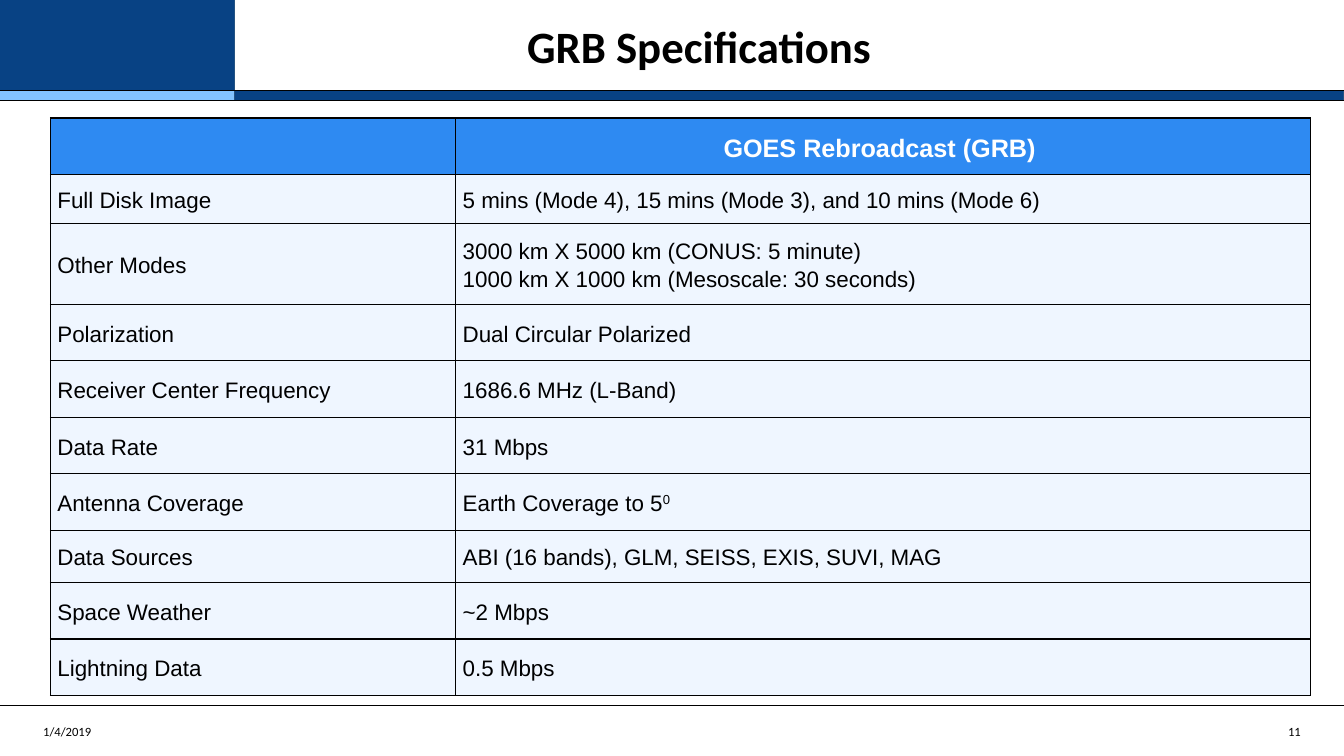
from lxml import etree
from pptx import Presentation
from pptx import util as u
from pptx.dml.color import RGBColor
from pptx.enum import shapes, text
from pptx.oxml.ns import qn

EMU_PER_PX = 9144  # 100 px to the inch
SLIDE_WIDTH, SLIDE_HEIGHT = 1333, 750
BAND_LEFT, BAND_TOP, BAND_BOTTOM, FOOTER_LINE = 233, 90, 100, 700

COLORS = {
    "navy": "084284",
    "sky": "82C3FF",
    "outline": "255382",
    "header": "2E8AF2",
    "body": "EFF6FF",
    "black": "000000",
    "white": "FFFFFF",
}

FORMATS = {
    "title": {"name": "Calibri", "size": u.Pt(32), "bold": True},
    "footer": {"name": "Calibri", "size": u.Pt(9), "bold": False},
    "header": {"name": "Arial", "size": u.Pt(18), "bold": True},
    "body": {"name": "Arial", "size": u.Pt(16), "bold": False},
}

COLUMN_WIDTHS = [402, 848]
# Row height, label, value lines; "^" starts a superscript
ROWS = [
    (56, "", ["GOES Rebroadcast (GRB) "]),
    (49, "Full Disk Image", ["5 mins (Mode 4), 15 mins (Mode 3), and 10 mins (Mode 6)"]),
    (80, "Other Modes", ["3000 km X 5000 km (CONUS: 5 minute)",
                         "1000 km X 1000 km (Mesoscale: 30 seconds)"]),
    (56, "Polarization", ["Dual Circular Polarized"]),
    (56, "Receiver Center Frequency", ["1686.6 MHz (L-Band)"]),
    (56, "Data Rate", ["31 Mbps"]),
    (56, "Antenna Coverage", ["Earth Coverage to 5^0"]),
    (52, "Data Sources", ["ABI (16 bands), GLM, SEISS, EXIS, SUVI, MAG"]),
    (56, "Space Weather", ["~2 Mbps"]),
    (56, "Lightning Data", ["0.5 Mbps"]),
]


def px(*lengths):
    return [u.Emu(length * EMU_PER_PX) for length in lengths]


def color(name):
    return RGBColor.from_string(COLORS[name])


def apply_format(font, format_name, color_name):
    for attribute, value in FORMATS[format_name].items():
        setattr(font, attribute, value)
    font.color.rgb = color(color_name)


def add_band(slide, box, fill):
    shape = slide.shapes.add_shape(shapes.MSO_SHAPE.RECTANGLE, *px(*box))
    shape.shadow.inherit = False
    shape.fill.solid()
    shape.fill.fore_color.rgb = color(fill)
    shape.line.color.rgb = color("outline")
    shape.line.width = u.Pt(0.75)


def add_rule(slide, top):
    rule = slide.shapes.add_connector(
        shapes.MSO_CONNECTOR.STRAIGHT, *px(0, top, SLIDE_WIDTH, top))
    rule.line.color.rgb = color("black")
    rule.line.width = u.Pt(1)
    etree.SubElement(rule._element.spPr, qn("a:effectLst"))


def add_label(slide, box, words, format_name, alignment, line_spacing=1.0):
    frame = slide.shapes.add_textbox(*px(*box)).text_frame
    frame.word_wrap = True
    frame.vertical_anchor = text.MSO_ANCHOR.MIDDLE
    paragraph = frame.paragraphs[0]
    paragraph.alignment = alignment
    paragraph.line_spacing = line_spacing
    run = paragraph.add_run()
    run.text = words
    apply_format(run.font, format_name, "black")


def add_borders(cell):
    properties = cell._tc.get_or_add_tcPr()
    for index, side in enumerate(("lnL", "lnR", "lnT", "lnB")):
        border = etree.Element(qn(f"a:{side}"), w=str(u.Pt(1)))
        fill = etree.SubElement(border, qn("a:solidFill"))
        etree.SubElement(fill, qn("a:srgbClr"), val=COLORS["black"])
        properties.insert(index, border)


def fill_cell(cell, lines, is_header):
    format_name = "header" if is_header else "body"
    for side in ("left", "right", "top", "bottom"):
        setattr(cell, f"margin_{side}", px(7)[0])
    cell.vertical_anchor = text.MSO_ANCHOR.MIDDLE
    cell.fill.solid()
    cell.fill.fore_color.rgb = color(format_name)
    add_borders(cell)
    for index, line in enumerate(lines):
        frame = cell.text_frame
        paragraph = frame.add_paragraph() if index else frame.paragraphs[0]
        paragraph.alignment = text.PP_ALIGN.CENTER if is_header else text.PP_ALIGN.LEFT
        paragraph.line_spacing = 1.15
        for position, words in enumerate(line.split("^")):
            if not words:
                continue
            run = paragraph.add_run()
            run.text = words
            apply_format(run.font, format_name, "white" if is_header else "black")
            if position:
                run._r.get_or_add_rPr().set("baseline", "30000")


def add_specifications(slide, left, top):
    heights = [height for height, _, _ in ROWS]
    table = slide.shapes.add_table(
        len(ROWS), len(COLUMN_WIDTHS),
        *px(left, top, sum(COLUMN_WIDTHS), sum(heights))).table
    table.horz_banding = False
    for column, width in zip(table.columns, px(*COLUMN_WIDTHS)):
        column.width = width
    for row, height in zip(table.rows, px(*heights)):
        row.height = height
    for index, (_, label, values) in enumerate(ROWS):
        fill_cell(table.cell(index, 0), [label], index == 0)
        fill_cell(table.cell(index, 1), values, index == 0)


def main():
    presentation = Presentation()
    presentation.slide_width, presentation.slide_height = px(SLIDE_WIDTH, SLIDE_HEIGHT)
    slide = presentation.slides.add_slide(presentation.slide_layouts[6])

    # Header bands and rules
    band_height = BAND_BOTTOM - BAND_TOP
    add_band(slide, (0, 0, BAND_LEFT, BAND_TOP), "navy")
    add_band(slide, (BAND_LEFT, BAND_TOP, SLIDE_WIDTH - BAND_LEFT, band_height), "navy")
    add_band(slide, (0, BAND_TOP, BAND_LEFT, band_height), "sky")
    for top in (BAND_BOTTOM, BAND_TOP, FOOTER_LINE):
        add_rule(slide, top)

    # Specifications table
    add_specifications(slide, 50, 117)

    # Title and footer
    align = text.PP_ALIGN
    add_label(slide, (356, 21, 675, 56), "GRB Specifications", "title", align.CENTER, 0.9)
    add_label(slide, (1046, 706, 254, 40), "11", "footer", align.RIGHT)
    add_label(slide, (33, 706, 254, 40), "1/4/2019", "footer", align.LEFT)

    presentation.save("out.pptx")


if __name__ == "__main__":
    main()
